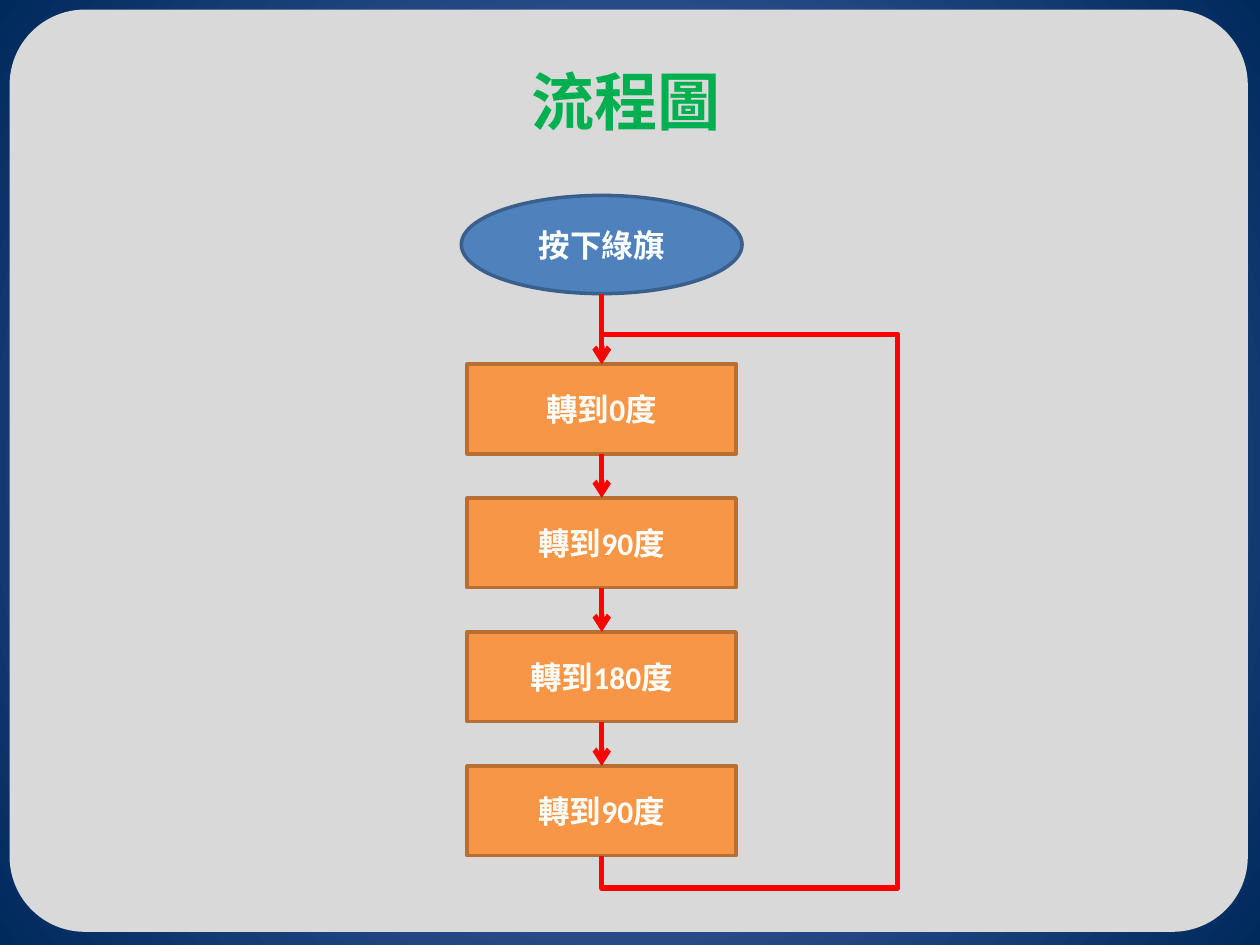
from pptx import Presentation
from pptx.dml.color import RGBColor
from pptx.enum.shapes import MSO_CONNECTOR, MSO_SHAPE
from pptx.enum.text import MSO_ANCHOR, MSO_AUTO_SIZE, PP_ALIGN
from pptx.oxml import parse_xml
from pptx.oxml.ns import nsdecls, qn
from pptx.oxml.xmlchemy import OxmlElement
from pptx.util import Cm, Pt

LINE = MSO_CONNECTOR.STRAIGHT
OVAL, RECT, ROUND = MSO_SHAPE.OVAL, MSO_SHAPE.RECTANGLE, MSO_SHAPE.ROUNDED_RECTANGLE
MID, CENTER, FIXED = MSO_ANCHOR.MIDDLE, PP_ALIGN.CENTER, MSO_AUTO_SIZE.NONE

GLOW = RGBColor(0x5E, 0x7C, 0xC5)
NAVY = RGBColor(0x00, 0x29, 0x5C)
GRAY = RGBColor(0xD9, 0xD9, 0xD9)
GREEN = RGBColor(0x00, 0xB0, 0x50)
BLUE = RGBColor(0x4F, 0x81, 0xBD)
STEEL = RGBColor(0x3A, 0x5F, 0x8C)
ORANGE = RGBColor(0xF7, 0x96, 0x46)
BROWN = RGBColor(0xB7, 0x6F, 0x34)
RED = RGBColor(0xFF, 0x00, 0x00)
WHITE = RGBColor(0xFF, 0xFF, 0xFF)


def write(frame, text, size=18, font="Calibri", color=WHITE):
    frame.word_wrap = True
    frame.auto_size = FIXED
    frame.vertical_anchor = MID
    para = frame.paragraphs[0]
    para.alignment = CENTER
    run = para.add_run()
    run.text = text
    run.font.size = Pt(size)
    run.font.name = font
    run.font.bold = True
    run.font.color.rgb = color


class Chart:
    """Draws the parts of a flow chart on one slide."""

    def __init__(self, slide):
        self.slide = slide
        self.shapes = slide.shapes

    def back(self):
        fill = self.slide.background.fill
        fill.gradient()
        for stop, color, place in zip(fill.gradient_stops, (GLOW, NAVY), (0, 1)):
            stop.color.rgb = color
            stop.position = place
        grad = self.slide.element.find(".//" + qn("a:gradFill"))
        grad.remove(grad.find(qn("a:lin")))
        grad.append(parse_xml(
            f'<a:path {nsdecls("a")} path="circle">'
            '<a:fillToRect l="50000" t="50000" r="50000" b="50000"/></a:path>'))

    def title(self, text, x, y, w, h):
        title = self.shapes.title
        title.left, title.top, title.width, title.height = Cm(x), Cm(y), Cm(w), Cm(h)
        write(title.text_frame, text, size=36, font="Noto Sans CJK JP", color=GREEN)

    def node(self, kind, x, y, w, h, fill, edge, text=None):
        node = self.shapes.add_shape(kind, Cm(x), Cm(y), Cm(w), Cm(h))
        node.shadow.inherit = False
        node.fill.solid()
        node.fill.fore_color.rgb = fill
        node.line.color.rgb = edge
        node.line.width = Pt(2)
        if text:
            write(node.text_frame, text)
        return node

    def panel(self, x, y, w, h):
        panel = self.node(ROUND, x, y, w, h, GRAY, GRAY)
        panel.adjustments[0] = 0.08
        self.shapes.element.insert(2, panel.element)

    def style(self, line):
        line.color.rgb = RED
        line.width = Pt(3)
        tail = OxmlElement("a:tailEnd")
        tail.set("type", "arrow")
        line.color
        line._get_or_add_ln().append(tail)

    def arrow(self, start, end):
        x = start.left + start.width // 2
        link = self.shapes.add_connector(LINE, x, start.top + start.height, x, end.top)
        if start.auto_shape_type == RECT:
            link.begin_connect(start, 2)
        link.end_connect(end, 0)
        self.style(link.line)
        link.element.spPr.append(OxmlElement("a:effectLst"))

    def loop(self, points):
        first, *rest = [(Cm(x), Cm(y)) for x, y in points]
        form = self.shapes.build_freeform(*first)
        form.add_line_segments(rest, close=False)
        loop = form.convert_to_shape()
        loop.shadow.inherit = False
        loop.fill.background()
        self.style(loop.line)


def main():
    deck = Presentation()
    deck.slide_width, deck.slide_height = Cm(25.4), Cm(19.05)
    chart = Chart(deck.slides.add_slide(deck.slide_layouts[5]))
    chart.back()
    chart.panel(0.23, 0.23, 24.89, 18.52)
    chart.title("流程圖", 8.51, 1.12, 8.2, 1.8)

    mid, top, step, wide, high = 12.13, 7.34, 2.7, 5.42, 1.81
    nodes = [chart.node(OVAL, mid - 2.83, 3.94, 5.66, 1.98, BLUE, STEEL, "按下綠旗")]
    for i, angle in enumerate((0, 90, 180, 90)):
        nodes.append(chart.node(RECT, mid - wide / 2, top + i * step, wide, high,
                                ORANGE, BROWN, f"轉到{angle}度"))
    for start, end in zip(nodes, nodes[1:]):
        chart.arrow(start, end)

    base, side = top + 3 * step + high, 18.1
    low, peak = base + 0.65, top - 0.6
    chart.loop([(mid, base), (mid, low), (side, low), (side, peak), (mid, peak), (mid, top)])
    deck.save("out.pptx")


if __name__ == "__main__":
    main()
